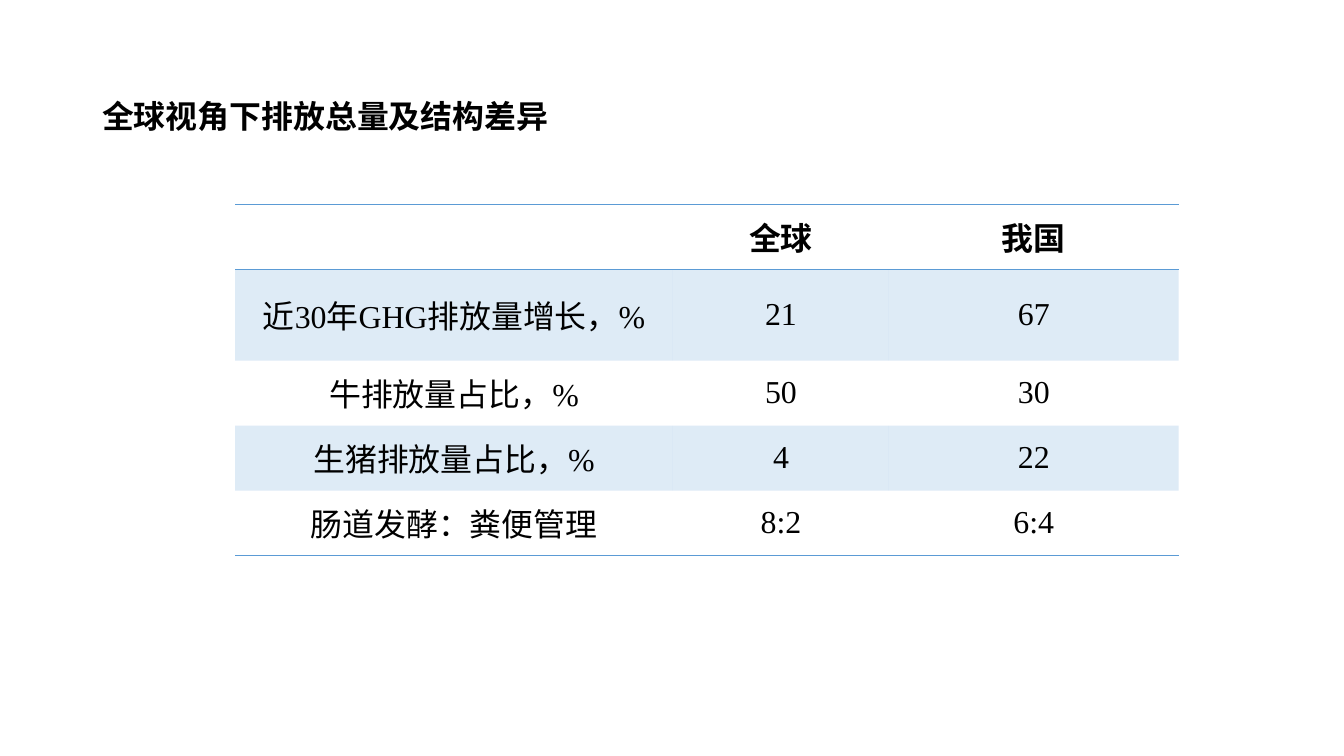
from lxml.etree import SubElement
from pptx import Presentation
from pptx.dml.color import RGBColor
from pptx.enum.text import MSO_ANCHOR, PP_ALIGN
from pptx.oxml import parse_xml
from pptx.oxml.ns import nsdecls, qn
from pptx.util import Inches, Pt

COLORS = {"text": "000000", "accent": "5B9BD5"}
CJK_FONT = "Noto Sans CJK SC"


def write(frame, text, font=CJK_FONT, bold=False, align=PP_ALIGN.LEFT):
    paragraph = frame.paragraphs[0]
    paragraph.alignment = align
    run = paragraph.add_run()
    run.text = text
    run.font.name = font
    run.font.size = Pt(24)
    run.font.bold = bold
    run.font.color.rgb = RGBColor.from_string(COLORS["text"])
    SubElement(run.font._element, qn("a:ea"), typeface=CJK_FONT)


def add_rule(cell, side):
    rule = parse_xml(
        f'<a:{side} {nsdecls("a")} w="12700"><a:solidFill>'
        f'<a:srgbClr val="{COLORS["accent"]}"/></a:solidFill></a:{side}>'
    )
    cell._tc.get_or_add_tcPr().insert(0, rule)


presentation = Presentation()
presentation.slide_width = Inches(14.06)
presentation.slide_height = Inches(7.91)
slide = presentation.slides.add_slide(presentation.slide_layouts[6])

emissions = [
    ["", "全球", "我国"],
    ["近30年GHG排放量增长，%", "21", "67"],
    ["牛排放量占比，%", "50", "30"],
    ["生猪排放量占比，%", "4", "22"],
    ["肠道发酵：粪便管理", "8:2", "6:4"],
]
column_widths = [4.58, 2.26, 3.03]
last_row = len(emissions) - 1

comparison_frame = slide.shapes.add_table(
    len(emissions), len(column_widths),
    Inches(2.46), Inches(2.14), Inches(9.87), Inches(3.4),
)
comparison = comparison_frame.table
comparison.first_row = False
comparison.horz_banding = False
table_style = comparison._tbl.tblPr.find(qn("a:tableStyleId"))
table_style.text = "{2D5ABB26-0587-4C30-8999-92F81FD0307C}"

for column, width in zip(comparison.columns, column_widths):
    column.width = Inches(width)

for row_index, values in enumerate(emissions):
    comparison.rows[row_index].height = Inches(0.68)
    for column_index, value in enumerate(values):
        cell = comparison.cell(row_index, column_index)
        cell.vertical_anchor = MSO_ANCHOR.MIDDLE
        if value:
            write(cell.text_frame, value, font="Times New Roman",
                  bold=row_index == 0, align=PP_ALIGN.CENTER)
        if row_index % 2:
            cell.fill.solid()
            cell.fill.fore_color.rgb = RGBColor.from_string(COLORS["accent"])
            band_color = cell._tc.tcPr.find(".//" + qn("a:srgbClr"))
            SubElement(band_color, qn("a:alpha"), val="20000")
        else:
            cell.fill.background()
        if row_index in (0, last_row):
            add_rule(cell, "lnB")
        if row_index == 0:
            add_rule(cell, "lnT")

heading = slide.shapes.add_textbox(
    Inches(0.97), Inches(0.96), Inches(8.29), Inches(0.5)
)
heading.text_frame.word_wrap = True
write(heading.text_frame, "全球视角下排放总量及结构差异", bold=True)

presentation.save("out.pptx")
